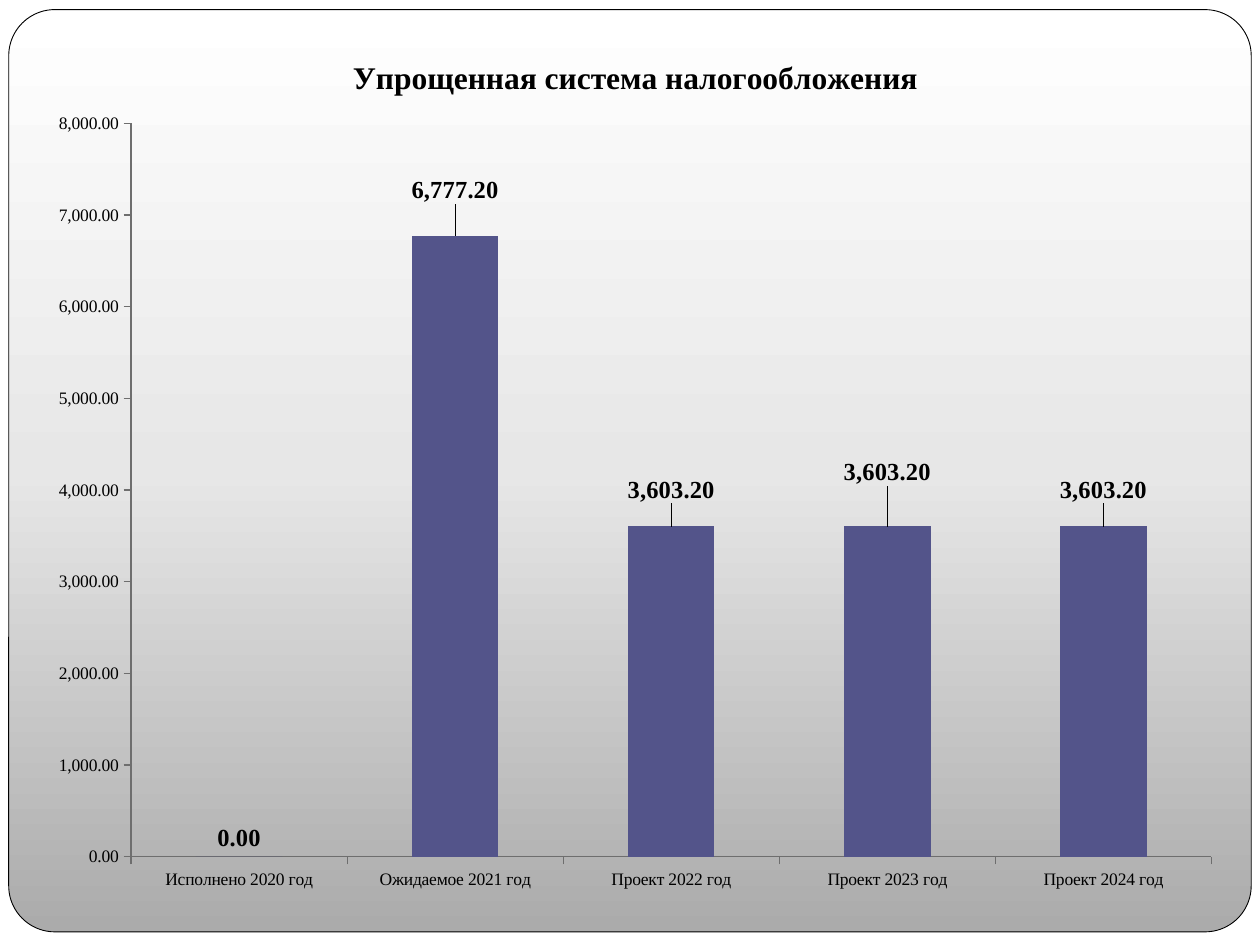
from dataclasses import dataclass

from lxml.etree import SubElement
from pptx import Presentation
from pptx.chart.data import CategoryChartData
from pptx.dml.color import RGBColor as Rgb
from pptx.enum.chart import XL_CHART_TYPE as ChartType
from pptx.enum.chart import XL_LABEL_POSITION as LabelPosition
from pptx.enum.chart import XL_TICK_MARK as TickMark
from pptx.enum.shapes import MSO_SHAPE as Shape
from pptx.oxml import parse_xml
from pptx.oxml.ns import nsdecls, qn
from pptx.util import Pt


@dataclass(frozen=True)
class Theme:
    font: str = "Times New Roman"
    ink: str = "000000"
    paper: str = "FFFFFF"
    bar: str = "53548A"
    axis: str = "6E6E6E"
    gradient: tuple = ((0, "ABABAB"), (50, "E7E7E7"), (100, "FFFFFF"))
    title_size: int = 18
    label_size: int = 14
    axis_size: int = 10


THEME = Theme()
AMOUNT = "#,##0.00"
REVENUE = {
    "Исполнено 2020 год": 0,
    "Ожидаемое 2021 год": 6777.2,
    "Проект 2022 год": 3603.2,
    "Проект 2023 год": 3603.2,
    "Проект 2024 год": 3603.2,
}
LABEL_SHIFTS = {1: (0, -0.03), 2: (0, -0.02), 3: (0, -0.04), 4: (0, -0.02)}


def style_font(font, size, bold=False, color=THEME.ink):
    font.name = THEME.font
    font.size = Pt(size)
    font.bold = bold
    font.color.rgb = Rgb.from_string(color)


def write_text(frame, text, **style):
    run = frame.paragraphs[0].add_run()
    run.text = text
    style_font(run.font, **style)


def add_panel(slide, kind, left, top, width, height):
    panel = slide.shapes.add_shape(kind, Pt(left), Pt(top), Pt(width), Pt(height))
    panel.shadow.inherit = False
    panel.line.fill.background()
    return panel


def fill_gradient(fill, holder, stops):
    fill.gradient()
    fill.gradient_angle = 90
    stop_list = next(holder.iter(qn("a:gsLst")))
    for old_stop in list(stop_list):
        stop_list.remove(old_stop)
    for percent, color in stops:
        stop = SubElement(stop_list, qn("a:gs"), pos=str(percent * 1000))
        SubElement(stop, qn("a:srgbClr"), val=color)


def place(owner, index, x, y, size=None, target=None):
    for old_layout in owner.findall(qn("c:layout")):
        owner.remove(old_layout)
    layout = parse_xml(f"<c:layout {nsdecls('c')}><c:manualLayout/></c:layout>")
    settings = {"layoutTarget": target}
    if target or owner.tag == qn("c:title"):
        settings.update(xMode="edge", yMode="edge")
    settings.update(x=x, y=y)
    if size:
        settings.update(w=size[0], h=size[1])
    for name, value in settings.items():
        if value is not None:
            SubElement(layout[0], qn(f"c:{name}"), val=str(value))
    owner.insert(index, layout)


def style_axis(axis):
    axis.has_major_gridlines = False
    axis.major_tick_mark = TickMark.OUTSIDE
    axis.minor_tick_mark = TickMark.NONE
    axis.format.line.color.rgb = Rgb.from_string(THEME.axis)
    axis.format.line.width = Pt(0.75)
    style_font(axis.tick_labels.font, THEME.axis_size)


def label_bars(plot, series):
    plot.has_data_labels = True
    labels = series.data_labels
    labels.show_value = True
    labels.number_format = AMOUNT
    labels.number_format_is_linked = False
    labels.position = LabelPosition.OUTSIDE_END
    style_font(labels.font, THEME.label_size, bold=True)
    for index in LABEL_SHIFTS:
        label = series.points[index].data_label
        style_font(label.font, THEME.label_size, bold=True)
        label.position = LabelPosition.OUTSIDE_END
    for label_xml, shift in zip(series._element.iter(qn("c:dLbl")), LABEL_SHIFTS.values()):
        place(label_xml, 1, *shift)


def add_revenue_chart(slide, title, left, top, width, height):
    data = CategoryChartData(number_format=AMOUNT)
    data.categories = list(REVENUE)
    data.add_series("Series 1", list(REVENUE.values()))
    chart = slide.shapes.add_chart(
        ChartType.COLUMN_CLUSTERED, Pt(left), Pt(top), Pt(width), Pt(height), data
    ).chart
    style_font(chart.font, THEME.axis_size)
    chart.has_legend = False
    chart.has_title = True
    write_text(chart.chart_title.text_frame, title, size=THEME.title_size, bold=True)

    plot = chart.plots[0]
    plot.gap_width = 150
    plot.vary_by_categories = False
    series = plot.series[0]
    series.format.fill.solid()
    series.format.fill.fore_color.rgb = Rgb.from_string(THEME.bar)
    label_bars(plot, series)

    style_axis(chart.category_axis)
    amounts = chart.value_axis
    style_axis(amounts)
    amounts.minimum_scale, amounts.maximum_scale, amounts.major_unit = 0, 8000, 1000
    amounts.tick_labels.number_format = AMOUNT
    amounts.tick_labels.number_format_is_linked = False

    chart_xml = chart._chartSpace.chart
    place(chart_xml.find(qn("c:title")), 1, 0.26, 0.03)
    place(chart_xml.plotArea, 0, 0.08, 0.11, size=(0.9, 0.83), target="inner")


def main():
    deck = Presentation()
    deck.slide_width, deck.slide_height = Pt(720), Pt(540)
    slide = deck.slides.add_slide(deck.slide_layouts[6])

    backdrop = add_panel(slide, Shape.RECTANGLE, 0, 0, 720, 540)
    backdrop.fill.solid()
    backdrop.fill.fore_color.rgb = Rgb.from_string(THEME.paper)

    card = add_panel(slide, Shape.ROUNDED_RECTANGLE, 5, 5.5, 710, 527)
    card.adjustments[0] = 0.05
    fill_gradient(card.fill, card.element, THEME.gradient)
    card.line.color.rgb = Rgb.from_string(THEME.ink)
    card.line.width = Pt(0.5)

    add_revenue_chart(slide, "Упрощенная система налогообложения", 20, 15, 686, 505)
    deck.save("out.pptx")


if __name__ == "__main__":
    main()
